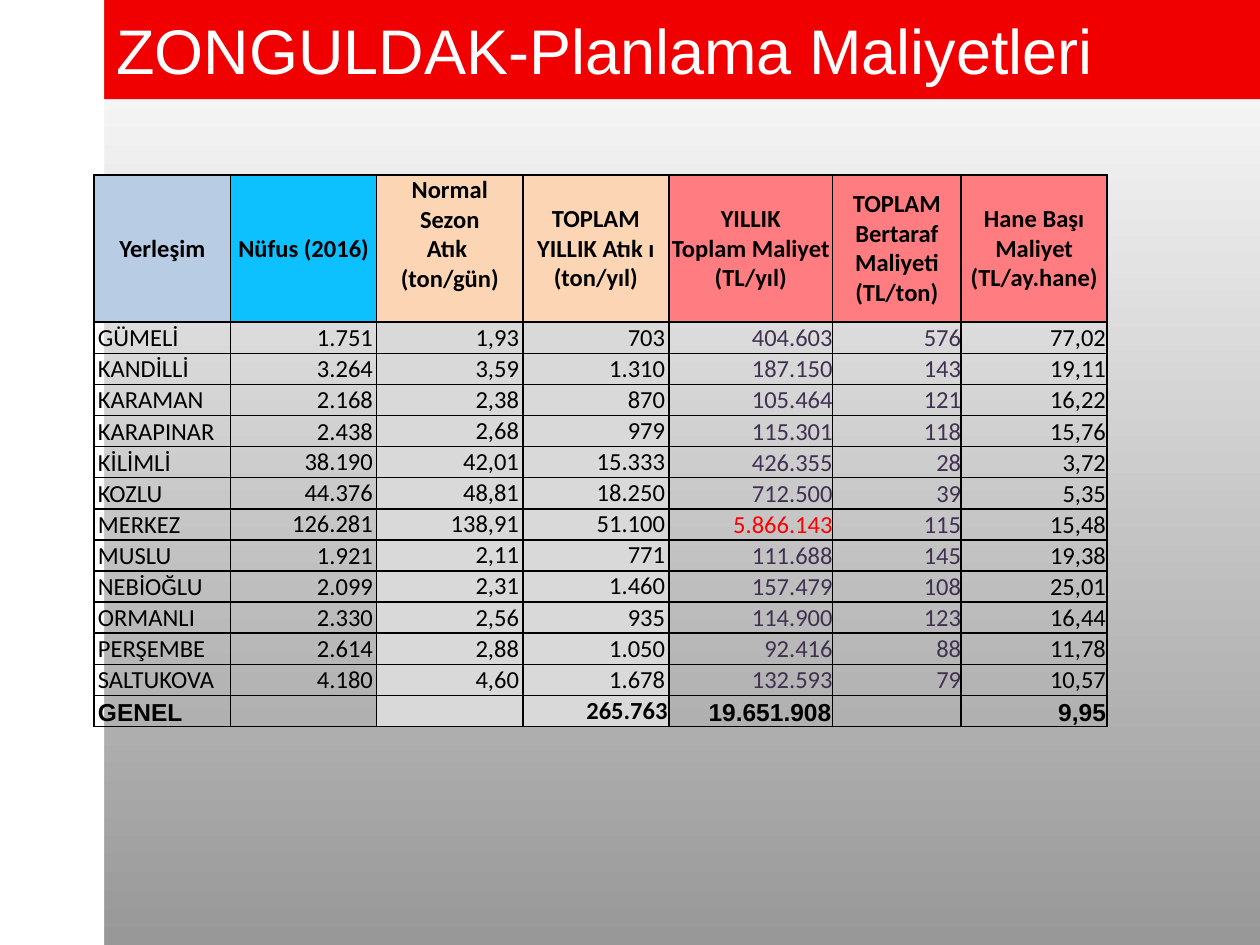
from lxml import etree
from pptx import Presentation
from pptx.dml.color import RGBColor
from pptx.enum import shapes, text
from pptx.oxml import ns
from pptx.util import Pt

WHITE = RGBColor(0xFF, 0xFF, 0xFF)
BLACK = RGBColor(0, 0, 0)
GRAY = RGBColor(0x98, 0x98, 0x98)
BANNER_RED = RGBColor(0xF0, 0, 0)
RED = RGBColor(0xFF, 0, 0)
PURPLE = RGBColor(0x40, 0x31, 0x51)
LIGHT_GRAY = RGBColor(0xD9, 0xD9, 0xD9)
BLUE = RGBColor(0xB8, 0xCC, 0xE4)
CYAN = RGBColor(0x0D, 0xC0, 0xFF)
PEACH = RGBColor(0xFC, 0xD5, 0xB4)
PINK = RGBColor(0xFF, 0x7C, 0x80)

HEADER_FILLS = [BLUE, CYAN, PEACH, PEACH, PINK, PINK, PINK]
COLUMN_WIDTHS = [78, 83.5, 83.5, 83.5, 93.6, 73.4, 83.5]
COLUMN_MARGINS = [2.16, 2.16, 2.16, 2.16, 0, 0, 0.72]
HEADER_HEIGHT, ROW_HEIGHT = 83.5, 17.8

# A vertical tab is a line break within a paragraph
ROWS = [
    ["Yerleşim", "Nüfus (2016)", "Normal Sezon\vAtık \v(ton/gün)\v",
     "TOPLAM YILLIK Atık ı\v(ton/yıl)", "YILLIK\vToplam Maliyet\v(TL/yıl)",
     "TOPLAM\vBertaraf Maliyeti\v(TL/ton)", "Hane Başı Maliyet\v(TL/ay.hane)"],
    ["GÜMELİ", "1.751", "1,93", "703", "404.603", "576", "77,02"],
    ["KANDİLLİ", "3.264", "3,59", "1.310", "187.150", "143", "19,11"],
    ["KARAMAN", "2.168", "2,38", "870", "105.464", "121", "16,22"],
    ["KARAPINAR", "2.438", "2,68", "979", "115.301", "118", "15,76"],
    ["KİLİMLİ", "38.190", "42,01", "15.333", "426.355", "28", "3,72"],
    ["KOZLU", "44.376", "48,81", "18.250", "712.500", "39", "5,35"],
    ["MERKEZ", "126.281", "138,91", "51.100", "5.866.143", "115", "15,48"],
    ["MUSLU", "1.921", "2,11", "771", "111.688", "145", "19,38"],
    ["NEBİOĞLU", "2.099", "2,31", "1.460", "157.479", "108", "25,01"],
    ["ORMANLI", "2.330", "2,56", "935", "114.900", "123", "16,44"],
    ["PERŞEMBE", "2.614", "2,88", "1.050", "92.416", "88", "11,78"],
    ["SALTUKOVA", "4.180", "4,60", "1.678", "132.593", "79", "10,57"],
    ["GENEL", "", "", "265.763", "19.651.908", "", "9,95"],
]
TOTAL_ROW = len(ROWS) - 1


def add_borders(cell):
    properties = cell._tc.get_or_add_tcPr()
    for position, side in enumerate(("lnL", "lnR", "lnT", "lnB")):
        line = etree.Element(ns.qn(f"a:{side}"), w=str(Pt(1)))
        fill = etree.SubElement(line, ns.qn("a:solidFill"))
        etree.SubElement(fill, ns.qn("a:srgbClr"), val=str(BLACK))
        properties.insert(position, line)


def style_text(paragraph, name, size, color, bold=False):
    font = paragraph.font
    font.name, font.size, font.bold = name, Pt(size), bold
    font.color.rgb = color


presentation = Presentation()
presentation.slide_width, presentation.slide_height = Pt(720), Pt(540)
slide = presentation.slides.add_slide(presentation.slide_layouts[6])

# Background gradient, white at the top
background = slide.background.fill
background.gradient()
background.gradient_angle = 270
for stop, position, color in zip(background.gradient_stops, (0, 1), (WHITE, GRAY)):
    stop.position = position
    stop.color.rgb = color

# Red banner and white side strip
for width, height, color in ((720, 56.6, BANNER_RED), (59.5, 540, WHITE)):
    band = slide.shapes.add_shape(
        shapes.MSO_SHAPE.RECTANGLE, 0, 0, Pt(width), Pt(height))
    band.shadow.inherit = False
    band.fill.solid()
    band.fill.fore_color.rgb = color
    band.line.fill.background()

# Title
title = slide.shapes.add_textbox(Pt(59.5), 0, Pt(648), Pt(56.6)).text_frame
title.word_wrap = True
title.vertical_anchor = text.MSO_ANCHOR.MIDDLE
title.text = "ZONGULDAK-Planlama Maliyetleri"
style_text(title.paragraphs[0], "Arial", 36, WHITE)

# Cost table
table = slide.shapes.add_table(
    len(ROWS), len(COLUMN_WIDTHS), Pt(53.8), Pt(100), Pt(sum(COLUMN_WIDTHS)),
    Pt(HEADER_HEIGHT + ROW_HEIGHT * TOTAL_ROW)).table
table.first_row = table.horz_banding = False
for column, width in zip(table.columns, COLUMN_WIDTHS):
    column.width = Pt(width)

for r, values in enumerate(ROWS):
    table.rows[r].height = Pt(ROW_HEIGHT if r else HEADER_HEIGHT)
    for c, value in enumerate(values):
        cell = table.cell(r, c)
        cell.text = value
        paragraph = cell.text_frame.paragraphs[0]
        total = r == TOTAL_ROW

        # Margins and alignment
        margin = 0.72 if total and c else COLUMN_MARGINS[c]
        cell.margin_left = cell.margin_right = Pt(margin)
        cell.margin_top = cell.margin_bottom = 0
        middle = r == 0 or (c in (2, 3) and not total) or (c == 1 and 5 <= r <= 7)
        cell.vertical_anchor = (
            text.MSO_ANCHOR.MIDDLE if middle else text.MSO_ANCHOR.BOTTOM)
        if r == 0:
            paragraph.alignment = text.PP_ALIGN.CENTER
        elif c:
            paragraph.alignment = text.PP_ALIGN.RIGHT

        # Font
        color = PURPLE if c in (4, 5) and 0 < r < TOTAL_ROW else BLACK
        if value == "5.866.143":
            color = RED
        name = "Arial" if total and c != 3 else "Calibri"
        style_text(paragraph, name, 14, color, bold=r == 0 or total)
        if not value:
            etree.SubElement(paragraph._p, ns.qn("a:endParaRPr"), sz="1400")

        # Fill and borders
        if r == 0 or c in (2, 3):
            cell.fill.solid()
            cell.fill.fore_color.rgb = LIGHT_GRAY if r else HEADER_FILLS[c]
        else:
            cell.fill.background()
        add_borders(cell)

presentation.save("out.pptx")
